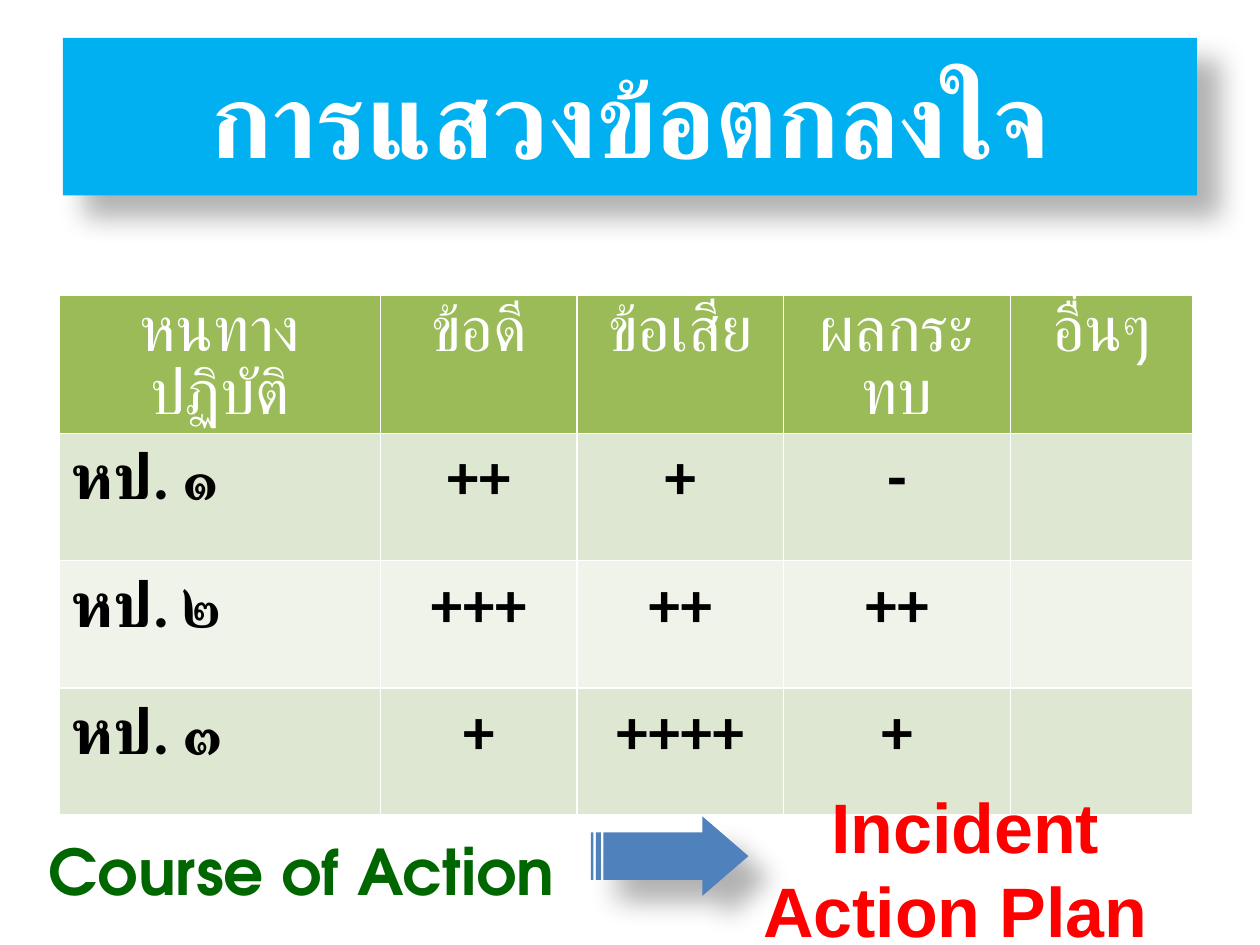
from pptx import Presentation
from pptx.dml.color import RGBColor
from pptx.enum.shapes import MSO_SHAPE
from pptx.enum.text import MSO_ANCHOR, MSO_AUTO_SIZE, PP_ALIGN
from pptx.oxml import parse_xml
from pptx.oxml.ns import nsdecls
from pptx.util import Inches, Pt

WHITE = RGBColor(0xFF, 0xFF, 0xFF)
BLACK = RGBColor(0x00, 0x00, 0x00)
SKY = RGBColor(0x00, 0xB0, 0xF0)
BLUE = RGBColor(0x4F, 0x81, 0xBD)
RED = RGBColor(0xFF, 0x00, 0x00)
DARK_GREEN = RGBColor(0x00, 0x66, 0x00)
HEADER_GREEN = RGBColor(0x9B, 0xBB, 0x59)
BANDS = [RGBColor(0xDE, 0xE7, 0xD1), RGBColor(0xEF, 0xF3, 0xEA)]

OPTIONS = [
    ["หนทางปฏิบัติ", "ข้อดี", "ข้อเสีย", "ผลกระทบ", "อื่นๆ"],
    ["หป. ๑", "++", "+", "-", ""],
    ["หป. ๒", "+++", "++", "++", ""],
    ["หป. ๓", "+", "++++", "+", ""],
]
COLUMN_WIDTHS = [2.55, 1.56, 1.64, 1.8, 1.45]
ROW_HEIGHT = 1.01


class SlideBuilder:
    display_font = "TeX Gyre Adventor"
    table_font = "Calibri"
    plan_font = "Arial"

    def __init__(self, slide):
        self.shapes = slide.shapes

    def set_text(self, tf, text, size, font, color, bold=True, align=PP_ALIGN.CENTER):
        tf.text = text
        p = tf.paragraphs[0]
        p.alignment = align
        for r in p.runs:
            r.font.size = Pt(size)
            r.font.name = font
            r.font.bold = bold
            r.font.color.rgb = color

    def shape(self, kind, box, fill):
        sp = self.shapes.add_shape(kind, *map(Inches, box))
        sp.fill.solid()
        sp.fill.fore_color.rgb = fill
        sp.line.fill.background()
        sp._element.spPr.append(parse_xml(
            f'<a:effectLst {nsdecls("a")}>'
            f'<a:outerShdw blurRad="{Pt(15)}" dist="{Pt(18)}" dir="2700000" '
            'sy="90000" rotWithShape="0"><a:srgbClr val="000000">'
            '<a:alpha val="30000"/></a:srgbClr></a:outerShdw></a:effectLst>'))
        return sp

    def title(self, text, box):
        tf = self.shape(MSO_SHAPE.RECTANGLE, box, SKY).text_frame
        tf.vertical_anchor = MSO_ANCHOR.MIDDLE
        self.set_text(tf, text, 60, self.display_font, WHITE)

    def label(self, text, box, size, font, color):
        tf = self.shapes.add_textbox(*map(Inches, box)).text_frame
        tf.word_wrap = True
        tf.auto_size = MSO_AUTO_SIZE.SHAPE_TO_FIT_TEXT
        self.set_text(tf, text, size, font, color)

    def table(self, rows, left, top):
        size = sum(COLUMN_WIDTHS), ROW_HEIGHT * len(rows)
        table = self.shapes.add_table(
            len(rows), len(COLUMN_WIDTHS), *map(Inches, (left, top, *size))).table
        for column, width in zip(table.columns, COLUMN_WIDTHS):
            column.width = Inches(width)
        for i, row in enumerate(rows):
            header = i == 0
            for j, text in enumerate(row):
                cell = table.cell(i, j)
                cell.fill.solid()
                cell.fill.fore_color.rgb = HEADER_GREEN if header else BANDS[(i - 1) % 2]
                align = PP_ALIGN.CENTER if header or j else PP_ALIGN.LEFT
                self.set_text(cell.text_frame, text, 36, self.table_font,
                              WHITE if header else BLACK, not header, align)

    def arrow(self, box):
        sp = self.shape(MSO_SHAPE.STRIPED_RIGHT_ARROW, box, BLUE)
        sp.adjustments[0] = 0.6
        sp.adjustments[1] = 0.58


def main():
    prs = Presentation()
    prs.slide_width = Inches(10)
    prs.slide_height = Inches(7.5)
    s = SlideBuilder(prs.slides.add_slide(prs.slide_layouts[6]))
    s.title("การแสวงข้อตกลงใจ", (0.5, 0.3, 9, 1.25))
    s.table(OPTIONS, 0.47, 2.34)
    s.label("Course of Action ", (0.08, 6.56, 4.77, 0.71), 36, s.display_font, DARK_GREEN)
    s.label("Incident Action Plan ", (5.63, 6.17, 4.06, 1.45), 40, s.plan_font, RED)
    s.arrow((4.69, 6.48, 1.25, 0.63))
    prs.save("out.pptx")


if __name__ == "__main__":
    main()
